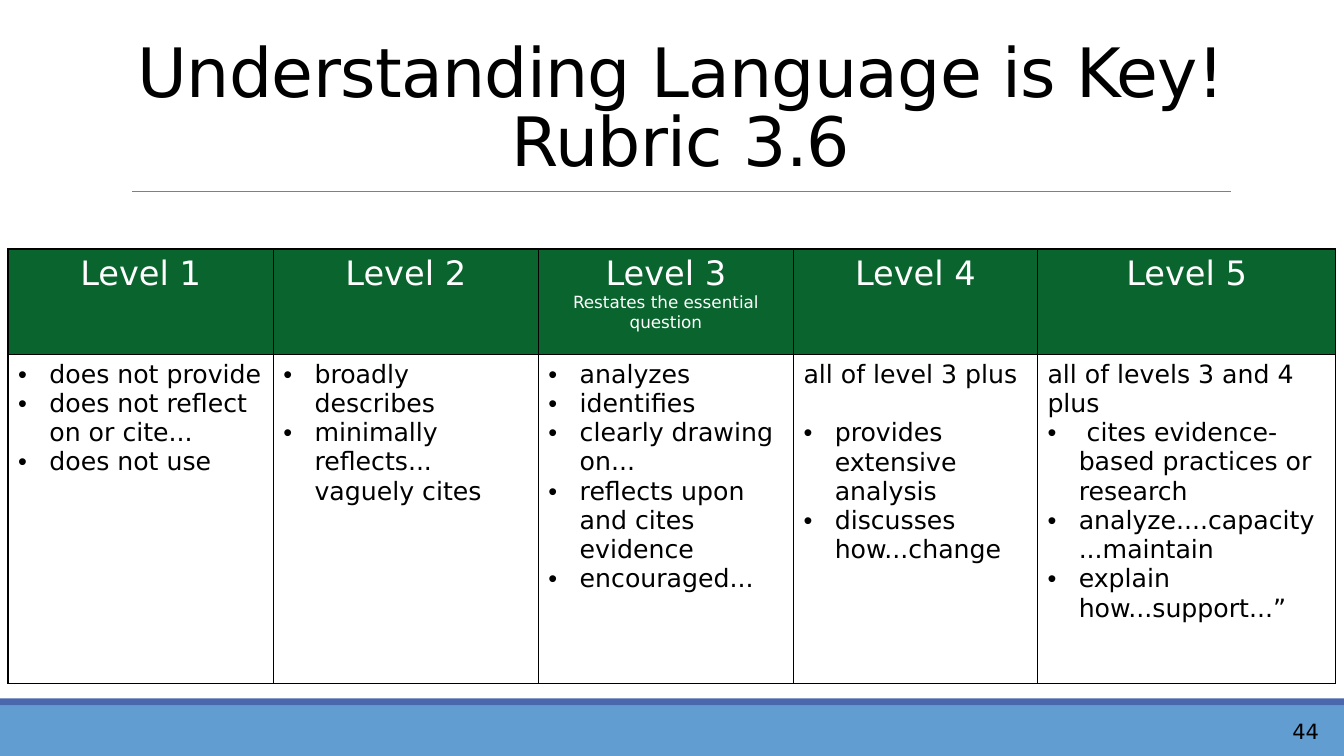
import pptx
import pptx.util
import pptx.dml.color
import pptx.enum.shapes
import pptx.enum.text
import pptx.oxml
import pptx.oxml.ns
import lxml.etree

Inches = pptx.util.Inches
Pt = pptx.util.Pt
RGB = pptx.dml.color.RGBColor.from_string
Align = pptx.enum.text.PP_ALIGN
Anchor = pptx.enum.text.MSO_ANCHOR
qn = pptx.oxml.ns.qn

THEME = {
    "font": "DejaVu Sans",
    "black": "000000", "white": "FFFFFF", "green": "09652D",
    "sky": "629DD1", "navy": "4A66AC", "gray": "808080",
    "title": 48.6, "head": 24, "body": 18, "page": 15, "note": 12,
}

LEVELS = [
    # heading lines, lead line, bullets, space above the first bullet
    (["Level 1"], None,
     ["does not provide", "does not reflect on or cite...", "does not use"], 0),
    (["Level 2"], None,
     ["broadly describes", "minimally reflects... vaguely cites"], 0),
    (["Level 3", "Restates the essential question"], None,
     ["analyzes", "identifies", "clearly drawing on...",
      "reflects upon and cites evidence", "encouraged..."], 0),
    (["Level 4"], "all of level 3 plus",
     ["provides extensive analysis", "discusses how...change"], 21),
    (["Level 5"], "all of levels 3 and 4 plus",
     [" cites evidence-based practices or research",
      "analyze....capacity ...maintain", "explain how...support...”"], 0),
]


def style(par, size, color, **form):
    """Format a paragraph and all of its runs."""
    for key, value in form.items():
        setattr(par, key, value)
    look = {"name": THEME["font"], "size": Pt(THEME[size]), "bold": False}
    for run in par.runs:
        for key, value in look.items():
            setattr(run.font, key, value)
        run.font.color.rgb = RGB(THEME[color])


def fill_cell(cell, lines):
    """Write (text, size, color, form, bullet) lines into a cell."""
    frame = cell.text_frame
    for i, (text, size, color, form, bullet) in enumerate(lines):
        par = frame.paragraphs[0] if i == 0 else frame.add_paragraph()
        par.text = text
        style(par, size, color, **form)
        if bullet:
            props = par._p.get_or_add_pPr()
            props.set("marL", str(Inches(0.31)))
            props.set("indent", str(-Inches(0.31)))
            lxml.etree.SubElement(props, qn("a:buFont")).set("typeface", "Arial")
            lxml.etree.SubElement(props, qn("a:buChar")).set("char", "•")


deck = pptx.Presentation()
deck.slide_width = Inches(13.33)
deck.slide_height = Inches(7.5)
slide = deck.slides.add_slide(deck.slide_layouts[5])
shapes = slide.shapes

# Footer bands
for top, height, color in [(7, 0.5, "sky"), (6.93, 0.07, "navy")]:
    band = shapes.add_shape(pptx.enum.shapes.MSO_SHAPE.RECTANGLE,
                            0, Inches(top), deck.slide_width, Inches(height))
    band.shadow.inherit = False
    band.fill.solid()
    band.fill.fore_color.rgb = RGB(THEME[color])
    band.line.fill.background()

# Rule under the title
rule = shapes.add_connector(pptx.enum.shapes.MSO_CONNECTOR.STRAIGHT,
                            Inches(1.31), Inches(1.9), Inches(12.21), Inches(1.9))
rule.line.color.rgb = RGB(THEME["gray"])
rule.line.width = Pt(0.5)
lxml.etree.SubElement(rule._element.spPr, qn("a:effectLst"))

# Title
title = shapes.title
place = {"left": 0.34, "top": 0.86, "width": 12.83, "height": 0.98}
for key, value in place.items():
    setattr(title, key, Inches(value))
frame = title.text_frame
frame.text = "Understanding Language is Key!\vRubric 3.6"
frame.auto_size = pptx.enum.text.MSO_AUTO_SIZE.NONE
frame.vertical_anchor = Anchor.BOTTOM
style(frame.paragraphs[0], "title", "black",
      alignment=Align.CENTER, line_spacing=0.85)
for run in frame.paragraphs[0].runs:
    run.font._element.set("spc", "-50")

# Rubric table
widths = [2.63, 2.63, 2.53, 2.42, 2.96]
heights = [1.05, 3.26]
table = shapes.add_table(2, len(LEVELS), Inches(0.08), Inches(2.47),
                         Inches(sum(widths)), Inches(sum(heights))).table
table.first_row = table.horz_banding = False
for col, width in zip(table.columns, widths):
    col.width = Inches(width)
for row, height in zip(table.rows, heights):
    row.height = Inches(height)

for i, (heads, lead, items, gap) in enumerate(LEVELS):
    center = {"alignment": Align.CENTER}
    fill_cell(table.cell(0, i),
              [(text, "note" if n else "head", "white", center, False)
               for n, text in enumerate(heads)])
    lines = [(lead, "body", "black", {}, False)] if lead else []
    lines += [(text, "body", "black",
               {"space_before": Pt(0 if n else gap)}, True)
              for n, text in enumerate(items)]
    fill_cell(table.cell(1, i), lines)

# Cell borders, then fills
for cell in table.iter_cells():
    props = cell._tc.get_or_add_tcPr()
    for side in ("a:lnL", "a:lnR", "a:lnT", "a:lnB"):
        edge = lxml.etree.SubElement(props, qn(side), w=str(Pt(1)))
        paint = lxml.etree.SubElement(edge, qn("a:solidFill"))
        lxml.etree.SubElement(paint, qn("a:srgbClr"), val=THEME["black"])
    cell.fill.background()
for i in range(len(LEVELS)):
    head = table.cell(0, i)
    head.fill.solid()
    head.fill.fore_color.rgb = RGB(THEME["green"])

# Page number
page = shapes.add_textbox(Inches(12.46), Inches(7.03), Inches(0.72), Inches(0.44))
page.text_frame.word_wrap = True
page.text_frame.vertical_anchor = Anchor.MIDDLE
page.text_frame.text = "44"
style(page.text_frame.paragraphs[0], "page", "black", alignment=Align.RIGHT)

deck.save("out.pptx")
